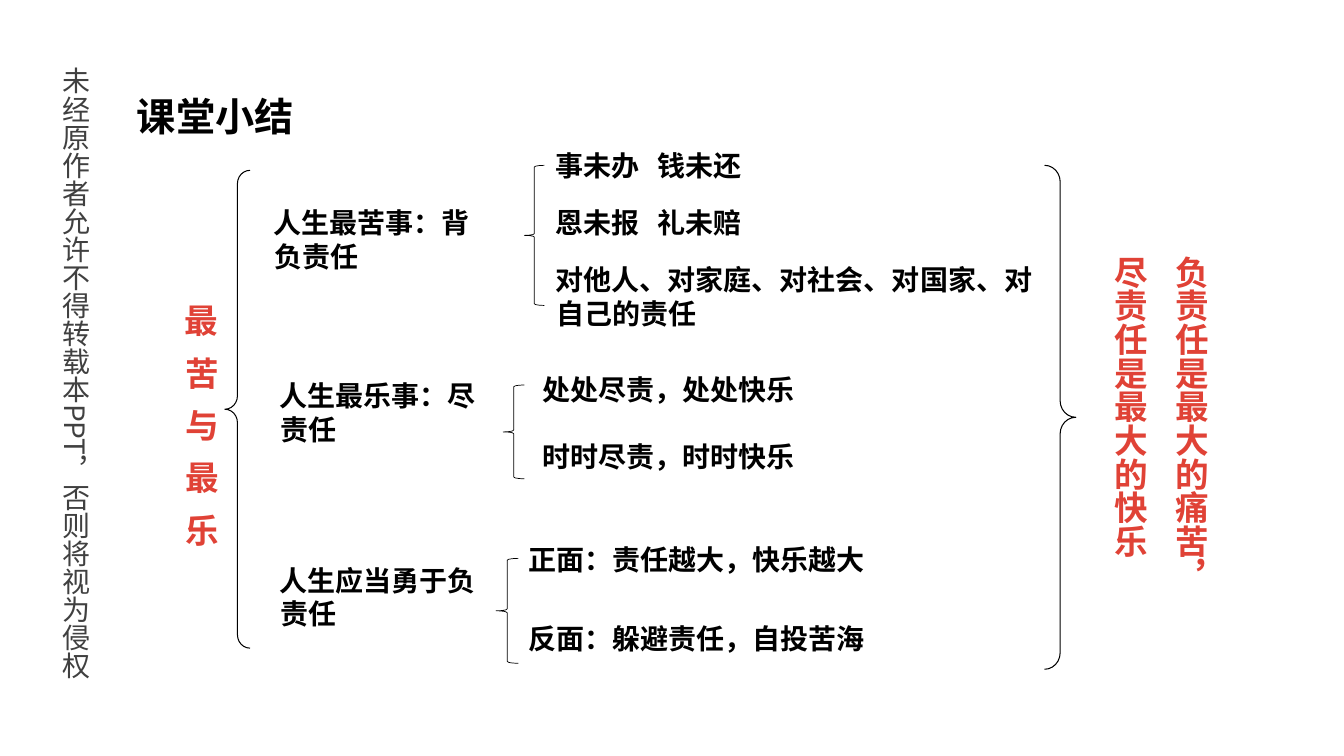
from lxml.etree import SubElement
from pptx import Presentation
from pptx.dml.color import RGBColor
from pptx.enum.shapes import MSO_SHAPE
from pptx.enum.text import MSO_ANCHOR, PP_ALIGN
from pptx.oxml.ns import qn
from pptx.util import Inches, Pt

FONT = "Noto Sans CJK SC"
BLACK = RGBColor(0, 0, 0)
RED = RGBColor(0xE0, 0x42, 0x36)
GRAY = RGBColor(0x40, 0x40, 0x40)

# Branch headings and their points: (text, left, top, width, height)
HEADS = [
    ("人生最苦事：背负责任", 2.61, 1.99, 2.38, 0.77),
    ("人生最乐事：尽责任", 2.67, 3.71, 2.32, 0.77),
    ("人生应当勇于负责任", 2.67, 5.54, 2.25, 0.77),
]
POINTS = [
    ("事未办\t钱未还", 5.41, 1.42, 3.47, 0.44),
    ("恩未报\t礼未赔", 5.41, 1.99, 3.47, 0.44),
    ("对他人、对家庭、对社会、对国家、对自己的责任", 5.41, 2.56, 5.11, 0.77),
    ("处处尽责，处处快乐", 5.28, 3.65, 4.33, 0.44),
    ("时时尽责，时时快乐", 5.28, 4.31, 4.33, 0.44),
    ("正面：责任越大，快乐越大", 5.14, 5.33, 4.97, 0.44),
    ("反面：躲避责任，自投苦海", 5.14, 6.12, 4.97, 0.44),
]
# Small braces: left, top, width, height
BRACES = [
    (5.2, 1.64, 0.2, 1.39),
    (4.99, 3.82, 0.21, 0.93),
    (4.92, 5.54, 0.22, 1.04),
]


def style(para, size, color, bold=True):
    font = para.font
    font.name, font.size, font.bold = FONT, Pt(size), bold
    font.color.rgb = color
    props = para._p.get_or_add_pPr().find(qn("a:defRPr"))
    SubElement(props, qn("a:ea"), typeface=FONT)


def add_text(slide, text, x, y, w, h, size=20, color=BLACK, bold=True,
             space=None, hang=0.01, upright=False):
    box = slide.shapes.add_textbox(Inches(x), Inches(y), Inches(w), Inches(h))
    frame = box.text_frame
    frame.word_wrap = True
    if upright:
        frame._txBody.bodyPr.set("vert", "eaVert")
    para = frame.paragraphs[0]
    para.text = text
    props = para._p.get_or_add_pPr()
    if hang:
        props.set("marL", str(Inches(hang)))
        props.set("indent", str(-Inches(hang)))
    if space:
        para.line_spacing = space
    if "\t" in text:
        tabs = SubElement(props, qn("a:tabLst"))
        SubElement(tabs, qn("a:tab"), pos=str(Inches(1.11)), algn="l")
    style(para, size, color, bold)


def add_brace(slide, x, y, w, h, line=0.5, curl=None, kind=MSO_SHAPE.LEFT_BRACE):
    brace = slide.shapes.add_shape(kind, Inches(x), Inches(y), Inches(w), Inches(h))
    brace.shadow.inherit = False
    brace.fill.background()
    brace.line.color.rgb = BLACK
    brace.line.width = Pt(line)
    if curl:
        brace.adjustments[0] = curl


def set_title(slide, text, x, y, w, h):
    title = slide.shapes.title
    title.left, title.top = Inches(x), Inches(y)
    title.width, title.height = Inches(w), Inches(h)
    frame = title.text_frame
    frame.text = text
    frame.vertical_anchor = MSO_ANCHOR.MIDDLE
    para = frame.paragraphs[0]
    para.alignment = PP_ALIGN.CENTER
    style(para, 28, BLACK)


def main():
    deck = Presentation()
    deck.slide_width, deck.slide_height = Inches(13.33), Inches(7.5)
    slide = deck.slides.add_slide(deck.slide_layouts[5])
    set_title(slide, "课堂小结", 1.15, 0.86, 1.97, 0.57)

    # Side notice
    add_text(slide, "未经原作者允许不得转载本PPT，否则将视为侵权", 0.42, 0.57, 0.71, 7.36,
             color=GRAY, bold=False, space=1.5, hang=0, upright=True)

    # Topic and conclusion with their large braces
    add_text(slide, "最苦与最乐", 1.73, 2.81, 0.56, 2.73, 24, RED, space=1.3)
    add_brace(slide, 2.23, 1.69, 0.25, 4.74, 0.75, 0.528)
    add_brace(slide, 10.36, 1.64, 0.31, 5, 0.75, 0.528, MSO_SHAPE.RIGHT_BRACE)
    add_text(slide, "负责任是最大的痛苦，尽责任是最大的快乐", 10.85, 2.44, 1.41, 3.74,
             24, RED, space=1.5, hang=0, upright=True)

    # Branches
    for item in HEADS + POINTS:
        add_text(slide, *item)
    for spot in BRACES:
        add_brace(slide, *spot)

    deck.save("out.pptx")


if __name__ == "__main__":
    main()
